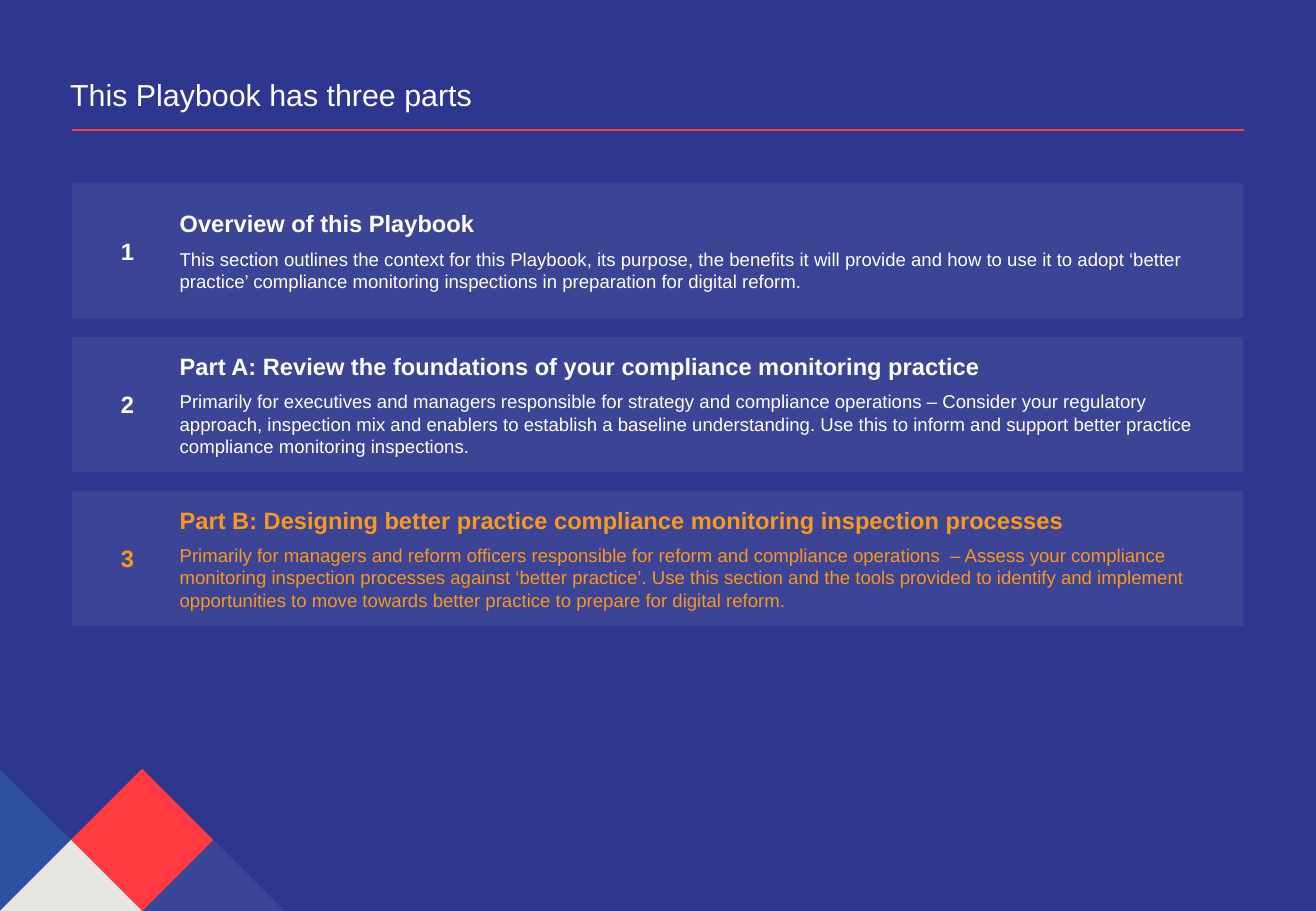
from lxml.etree import SubElement
from pptx import Presentation
from pptx.dml.color import RGBColor
from pptx.enum.shapes import MSO_CONNECTOR, MSO_SHAPE
from pptx.enum.text import MSO_ANCHOR, PP_ALIGN
from pptx.oxml.ns import qn
from pptx.util import Inches, Pt

COLORS = {
    "navy": "2E368F",
    "red": "FF3A40",
    "sky": "25B3E0",
    "stone": "E6E6E1",
    "white": "FFFFFF",
    "orange": "F8981D",
}

PARTS = [
    ("Overview of this Playbook",
     "This section outlines the context for this Playbook, its purpose, the benefits it will provide "
     "and how to use it to adopt ‘better practice’ compliance monitoring inspections in preparation "
     "for digital reform.", "white"),
    ("Part A: Review the foundations of your compliance monitoring practice",
     "Primarily for executives and managers responsible for strategy and compliance operations – "
     "Consider your regulatory approach, inspection mix and enablers to establish a baseline "
     "understanding. Use this to inform and support better practice compliance monitoring "
     "inspections.", "white"),
    ("Part B: Designing better practice compliance monitoring inspection processes",
     "Primarily for managers and reform officers responsible for reform and compliance operations  – "
     "Assess your compliance monitoring inspection processes against ‘better practice’. Use this "
     "section and the tools provided to identify and implement opportunities to move towards better "
     "practice to prepare for digital reform.", "orange"),
]


def rgb(name):
    return RGBColor.from_string(COLORS[name])


def paint(shape, color, alpha=100):
    shape.shadow.inherit = False
    shape.line.fill.background()
    shape.fill.solid()
    shape.fill.fore_color.rgb = rgb(color)
    if alpha < 100:
        tint = shape.fill._xPr.find(".//" + qn("a:srgbClr"))
        SubElement(tint, qn("a:alpha")).set("val", str(alpha * 1000))


def write(para, text, size, color, bold=False):
    run = para.add_run()
    run.text = text
    font = run.font
    font.name = "Arial"
    font.size = Pt(size)
    font.bold = bold
    font.color.rgb = rgb(color)


def label(slide, box, text, size, color, anchor, align, bold=False):
    frame = slide.shapes.add_textbox(*map(Inches, box)).text_frame
    frame.word_wrap = True
    frame.vertical_anchor = anchor
    para = frame.paragraphs[0]
    para.alignment = align
    write(para, text, size, color, bold)


def header(slide, x, y, w, h):
    label(slide, (x - 0.11, y, w + 0.11, 0.65), "This Playbook has three parts",
          18, "white", MSO_ANCHOR.BOTTOM, PP_ALIGN.LEFT)
    rule = slide.shapes.add_connector(
        MSO_CONNECTOR.STRAIGHT, Inches(x), Inches(y + h), Inches(x + w), Inches(y + h))
    rule.line.color.rgb = rgb("red")
    rule.line.width = Pt(1.25)
    SubElement(rule._element.spPr, qn("a:effectLst"))


def card(slide, x, y, w, h, num, title, body, color):
    panel = slide.shapes.add_shape(MSO_SHAPE.RECTANGLE, *map(Inches, (x, y, w, h)))
    paint(panel, "white", 7)
    frame = panel.text_frame
    frame.word_wrap = True
    frame.vertical_anchor = MSO_ANCHOR.MIDDLE
    for para, text, size in ((frame.paragraphs[0], title, 14), (frame.add_paragraph(), body, 11)):
        para._p.get_or_add_pPr().set("marL", str(Inches(0.79)))
        para.alignment = PP_ALIGN.LEFT
        para.space_after = Pt(6)
        write(para, text, size, color, size == 14)
    side = 0.38
    label(slide, (x + 0.27, y + (h - side) / 2, side, side), str(num),
          14, color, MSO_ANCHOR.MIDDLE, PP_ALIGN.CENTER, True)


def cards(slide, x, y, w, h):
    tall = 1.11
    step = (h - tall) / (len(PARTS) - 1)
    for i, part in enumerate(PARTS):
        card(slide, x, y + i * step, w, tall, i + 1, *part)


def corner(slide, x, y, w, h):
    u, v = w / 4, h / 2
    tiles = [
        ([(2, 0), (1, 1), (2, 2), (3, 1)], "red", 100),
        ([(0, 0), (0, 2), (1, 1)], "sky", 20),
        ([(3, 1), (2, 2), (4, 2)], "white", 7),
        ([(0, 2), (2, 2), (1, 1)], "stone", 100),
    ]
    for grid, color, alpha in tiles:
        pts = [(Inches(x + a * u), Inches(y + b * v)) for a, b in grid]
        build = slide.shapes.build_freeform(*pts[0])
        build.add_line_segments(pts[1:], close=True)
        paint(build.convert_to_shape(), color, alpha)


def main():
    deck = Presentation()
    deck.slide_width = Inches(10.83)
    deck.slide_height = Inches(7.5)
    slide = deck.slides.add_slide(deck.slide_layouts[6])
    fill = slide.background.fill
    fill.solid()
    fill.fore_color.rgb = rgb("navy")
    corner(slide, 0, 6.33, 2.34, 1.17)
    header(slide, 0.59, 0.33, 9.65, 0.74)
    cards(slide, 0.59, 1.51, 9.64, 3.64)
    deck.save("out.pptx")


if __name__ == "__main__":
    main()
